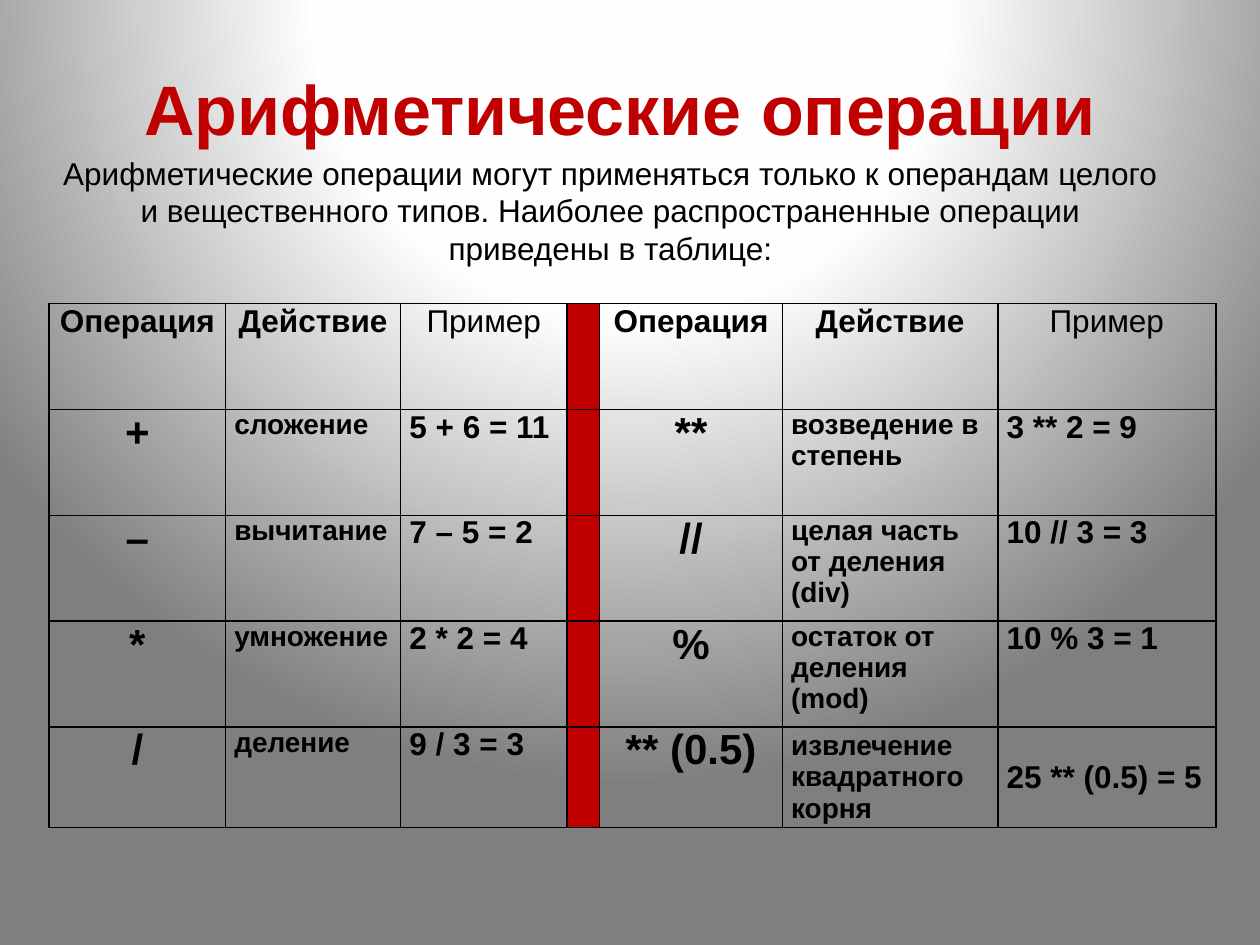
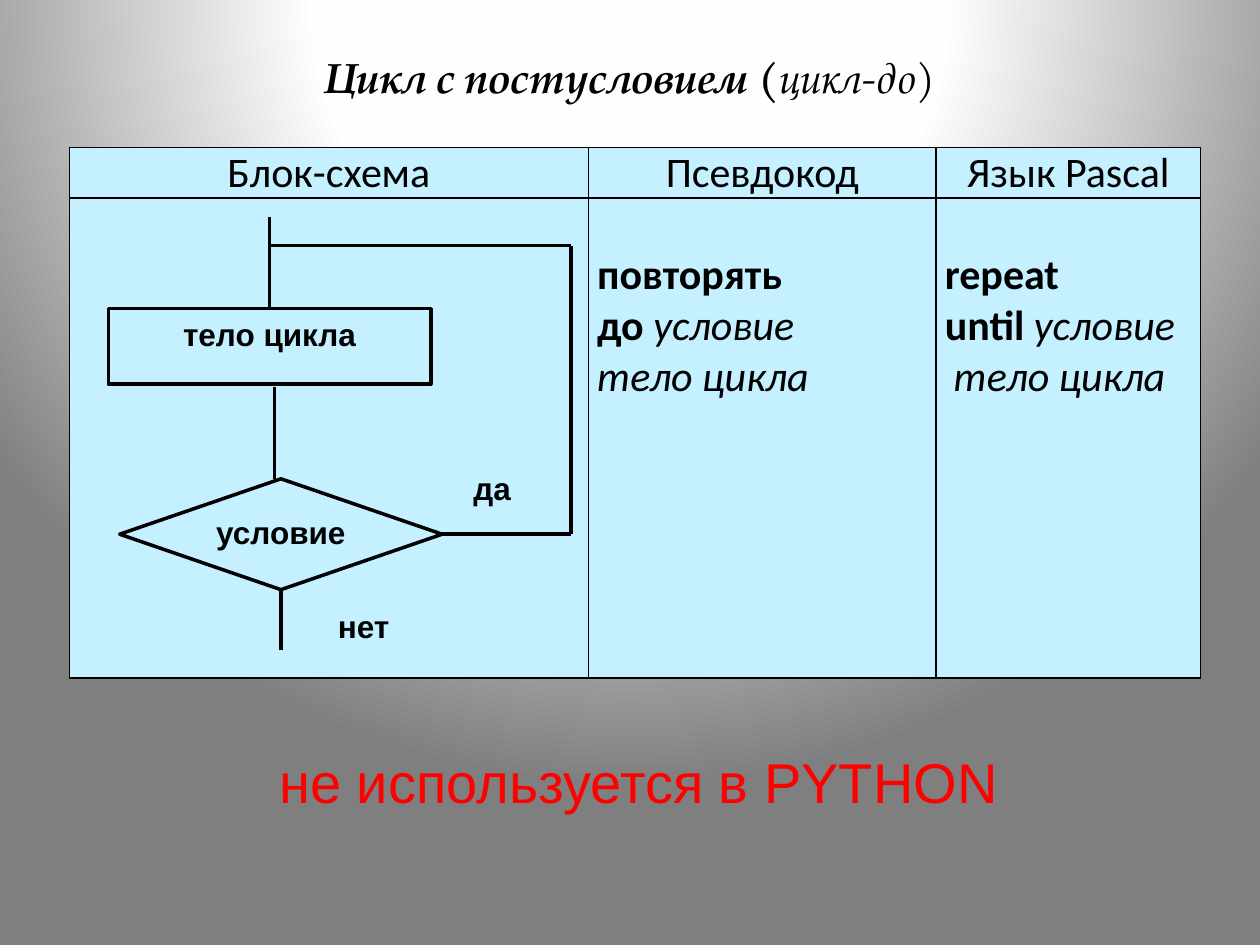
import pptx
import pptx.dml.color
import pptx.enum.shapes
import pptx.enum.text
import pptx.oxml
import pptx.oxml.ns
import pptx.util

Inches = pptx.util.Inches
ALIGN = pptx.enum.text.PP_ALIGN
ANCHOR = pptx.enum.text.MSO_ANCHOR
SHAPE = pptx.enum.shapes.MSO_SHAPE

BLACK, DARK_RED, RED, PALE_BLUE = "000000", "C00000", "FF0000", "C5F0FF"
BACKDROP_STOPS = [(0, "FFFFFF"), (40, "FEFEFE"), (100, "7F7F7F")]
LABEL = {"size": 18, "name": "Arial", "bold": True}
CODE = {"size": 24, "name": "Calibri"}
KEYWORD = {**CODE, "bold": True}
VARIABLE = {**CODE, "italic": True}

OPERATION_HEADER = ["Операция", "Действие", "Пример"]
LEFT_OPERATIONS = [
    ("+", "сложение", "5 + 6 = 11"),
    ("–", "вычитание", "7 – 5 = 2"),
    ("*", "умножение", "2 * 2 = 4"),
    ("/", "деление", "9 / 3 = 3"),
]
RIGHT_OPERATIONS = [
    ("**", "возведение в степень", "3 ** 2 = 9"),
    ("//", "целая часть от деления (div)", "10 // 3 = 3"),
    ("%", "остаток от деления (mod)", "10 % 3 = 1"),
    ("** (0.5)", "извлечение квадратного корня", "25 ** (0.5) = 5"),
]


def color(hex_code):
    """Turn a hex string into a colour."""
    return pptx.dml.color.RGBColor.from_string(hex_code)


def set_backdrop(master):
    """Give every slide the circular white to grey gradient."""
    master.background.fill.gradient()
    gradient = master.element.find(".//" + pptx.oxml.ns.qn("a:gradFill"))
    stops = "".join(
        f'<a:gs pos="{position * 1000}"><a:srgbClr val="{shade}"/></a:gs>'
        for position, shade in BACKDROP_STOPS
    )
    circle = pptx.oxml.parse_xml(
        f'<a:gradFill {pptx.oxml.ns.nsdecls("a")} rotWithShape="1"><a:gsLst>{stops}</a:gsLst>'
        '<a:path path="circle"><a:fillToRect l="50000" t="-80000" r="50000" b="180000"/>'
        "</a:path></a:gradFill>"
    )
    gradient.getparent().replace(gradient, circle)


def add_runs(paragraph, runs, align=ALIGN.CENTER):
    """Write (text, format) runs into a paragraph."""
    paragraph.alignment = align
    for text, style in runs:
        run = paragraph.add_run()
        run.text = text
        values = {"bold": False, "italic": False, "color": BLACK, **style}
        run.font.color.rgb = color(values.pop("color"))
        values["size"] = pptx.util.Pt(values["size"])
        for name, value in values.items():
            setattr(run.font, name, value)


def add_text(slide, box, runs):
    """Add a centred, wrapping text box."""
    frame = slide.shapes.add_textbox(*map(Inches, box)).text_frame
    frame.word_wrap = True
    add_runs(frame.paragraphs[0], runs)


def add_block(slide, preset, box, text):
    """Add a labelled flowchart block."""
    shape = slide.shapes.add_shape(preset, *map(Inches, box))
    shape.shadow.inherit = False
    shape.fill.solid()
    shape.fill.fore_color.rgb = color(PALE_BLUE)
    shape.line.color.rgb = color(BLACK)
    shape.line.width = pptx.util.Pt(2)
    shape.text_frame.vertical_anchor = ANCHOR.TOP
    add_runs(shape.text_frame.paragraphs[0], [(text, LABEL)])
    return shape


def add_line(slide, start, end):
    """Add a straight black flow line."""
    line = slide.shapes.add_connector(
        pptx.enum.shapes.MSO_CONNECTOR.STRAIGHT, *map(Inches, (*start, *end))
    )
    line.line.color.rgb = color(BLACK)
    line.line.width = pptx.util.Pt(2)
    properties = line.element.find(pptx.oxml.ns.qn("p:spPr"))
    properties.append(pptx.oxml.parse_xml(f'<a:effectLst {pptx.oxml.ns.nsdecls("a")}/>'))
    return line


def format_cell(cell, fill=None):
    """Set the margins, black borders and fill of a table cell."""
    cell.margin_left = cell.margin_right = Inches(0.07)
    cell.margin_top = cell.margin_bottom = 0
    properties = cell._tc.get_or_add_tcPr()
    for side in ("lnL", "lnR", "lnT", "lnB"):
        properties.append(pptx.oxml.parse_xml(
            f'<a:{side} {pptx.oxml.ns.nsdecls("a")} w="12700"><a:solidFill>'
            f'<a:srgbClr val="{BLACK}"/></a:solidFill></a:{side}>'
        ))
    if fill:
        cell.fill.solid()
        cell.fill.fore_color.rgb = color(fill)
    else:
        cell.fill.background()


def add_grid(slide, corner, widths, heights, fill=None):
    """Add a bordered table with the given column widths and row heights."""
    frame = slide.shapes.add_table(
        len(heights), len(widths), *map(Inches, (*corner, sum(widths), sum(heights)))
    )
    table = frame.table
    table.first_row = table.horz_banding = False
    for column, width in zip(table.columns, widths):
        column.width = Inches(width)
    for row, height in zip(table.rows, heights):
        row.height = Inches(height)
    for cell in table.iter_cells():
        format_cell(cell, fill)
    return table


def fill_operations(table, first_column, operations):
    """Write one three-column half of the operations table."""
    for offset, text in enumerate(OPERATION_HEADER):
        paragraph = table.cell(0, first_column + offset).text_frame.paragraphs[0]
        add_runs(paragraph, [(text, {**LABEL, "bold": offset < 2})])
    columns = [(24, ALIGN.CENTER), (16, ALIGN.LEFT), (18, ALIGN.LEFT)]
    for row, operation in enumerate(operations, 1):
        for offset, (text, (size, align)) in enumerate(zip(operation, columns)):
            paragraph = table.cell(row, first_column + offset).text_frame.paragraphs[0]
            add_runs(paragraph, [(text, {**LABEL, "size": size})], align)


def build_operations(slide):
    """Build the slide on arithmetic operations."""
    add_text(slide, (0.31, 0.47, 9.22, 0.77),
             [("Арифметические операции", {**LABEL, "size": 40, "color": DARK_RED})])
    add_text(slide, (0.39, 1.17, 8.91, 1.01), [(
        "Арифметические операции могут применяться только к операндам целого "
        "и вещественного типов. Наиболее распространенные операции "
        "приведены в таблице:", {**LABEL, "bold": False})])
    table = add_grid(slide, (0.39, 2.41), [1.4, 1.39, 1.32, 0.26, 1.45, 1.71, 1.73],
                     [0.84] * 4 + [0.8])
    for row in range(len(table.rows)):
        divider = table.cell(row, 3)
        divider.fill.solid()
        divider.fill.fore_color.rgb = color(DARK_RED)
    fill_operations(table, 0, LEFT_OPERATIONS)
    fill_operations(table, 4, RIGHT_OPERATIONS)
    for column in (5, 6):
        table.cell(4, column).vertical_anchor = ANCHOR.MIDDLE


def add_code(cell, lines):
    """Write code lines one line below the top of a cell."""
    cell.margin_top = Inches(0.41)
    frame = cell.text_frame
    for index, runs in enumerate(lines):
        paragraph = frame.add_paragraph() if index else frame.paragraphs[0]
        add_runs(paragraph, runs, ALIGN.LEFT)


def add_flowchart(slide):
    """Draw the loop with its condition after the body."""
    body = add_block(slide, SHAPE.RECTANGLE, (0.86, 2.45, 2.56, 0.6), "тело цикла")
    add_line(slide, (2.14, 1.72), (2.14, 2.45)).end_connect(body, 0)
    add_line(slide, (2.18, 3.07), (2.18, 3.8))
    condition = add_block(slide, SHAPE.DIAMOND, (0.95, 3.8, 2.56, 0.88), "условие")
    add_line(slide, (2.23, 4.68), (2.23, 5.16)).begin_connect(condition, 2)
    add_line(slide, (4.53, 4.24), (3.51, 4.24)).end_connect(condition, 3)
    add_line(slide, (4.53, 4.24), (4.53, 1.95))
    add_line(slide, (4.53, 1.95), (2.14, 1.95))
    for text, left, top in [("нет", 2.34, 4.77), ("да", 3.36, 3.67)]:
        add_text(slide, (left, top, 1.09, 0.4), [(text, LABEL)])


def build_loop(slide):
    """Build the slide on the loop with a postcondition."""
    heading = {"size": 24, "name": "TeX Gyre Pagella", "italic": True}
    add_text(slide, (1.6, 0.36, 6.8, 0.51),
             [("Цикл с постусловием (", {**heading, "bold": True}), ("цикл-до)", heading)])
    table = add_grid(slide, (0.55, 1.17), [4.12, 2.76, 2.1], [0.4, 3.81], PALE_BLUE)
    for column, text in enumerate(["Блок-схема", "Псевдокод", "Язык Pascal"]):
        add_runs(table.cell(0, column).text_frame.paragraphs[0], [(text, CODE)])
    for column, start, finish in [(1, "повторять", "до "), (2, "repeat", "until ")]:
        add_code(table.cell(1, column), [
            [(start, KEYWORD)],
            [(finish, KEYWORD), ("условие", VARIABLE)],
            [("тело цикла", VARIABLE)],
        ])
    pascal_body = table.cell(1, 2).text_frame.paragraphs[2]
    pascal_body._p.get_or_add_pPr().set("marL", str(Inches(0.07)))
    add_flowchart(slide)
    add_text(slide, (1.6, 5.88, 6.94, 0.64),
             [("не используется в PYTHON", {"size": 32, "name": "Arial", "color": RED})])


def main():
    """Build and save the presentation."""
    presentation = pptx.Presentation()
    presentation.slide_width, presentation.slide_height = Inches(10), Inches(7.5)
    set_backdrop(presentation.slide_master)
    for build in (build_operations, build_loop):
        build(presentation.slides.add_slide(presentation.slide_layouts[6]))
    presentation.save("out.pptx")


if __name__ == "__main__":
    main()
